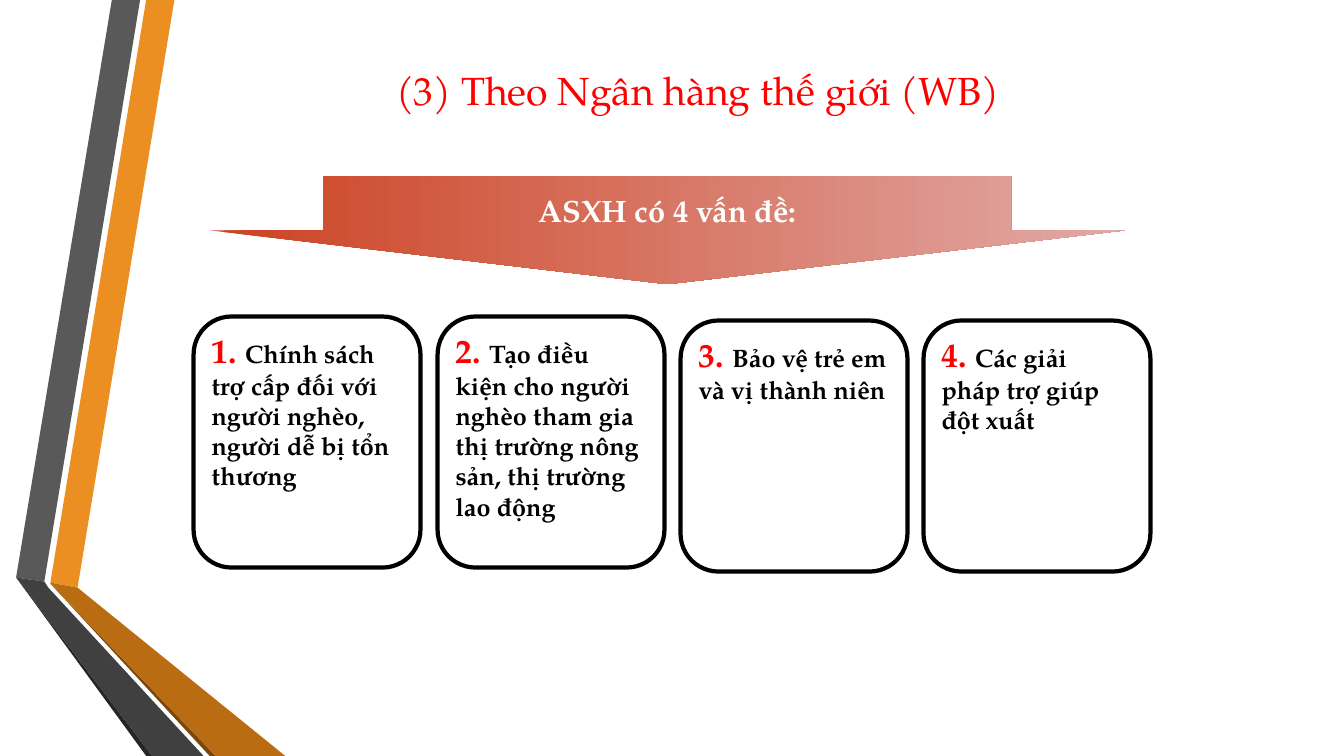
"""Build the slide on the four social security issues named by the World Bank."""
from pptx import Presentation
from pptx.dml.color import RGBColor
from pptx.enum.shapes import MSO_SHAPE
from pptx.enum.text import MSO_ANCHOR, MSO_AUTO_SIZE, PP_ALIGN
from pptx.util import Emu, Pt

FONT = "TeX Gyre Pagella"
PX = 9144


def px(*lengths):
    return [Emu(n * PX) for n in lengths]


def rgb(value):
    return RGBColor.from_string(value)


prs = Presentation()
prs.slide_width, prs.slide_height = px(1333, 750)
s = prs.slides.add_slide(prs.slide_layouts[6])

ribbons = [
    ("EB8F22", [(50, 578), (77, 583), (173, 0), (145, 0)]),
    ("595959", [(139, 0), (111, 0), (16, 573), (44, 577)]),
    ("262626", [(16, 573), (145, 750), (151, 750)]),
    ("7B480B", [(50, 579), (208, 750), (214, 750)]),
    ("B96C11", [(50, 578), (50, 579), (214, 750), (283, 750), (77, 583)]),
    ("404040", [(202, 750), (48, 583), (44, 577), (16, 573), (151, 750)]),
]
ribbon_group = s.shapes.add_group_shape()
for color, points in ribbons:
    builder = ribbon_group.shapes.build_freeform(*points[0], scale=PX)
    builder.add_line_segments(points[1:], close=True)
    sp = builder.convert_to_shape()
    sp.shadow.inherit = False
    sp.fill.solid()
    sp.fill.fore_color.rgb = rgb(color)
    sp.line.fill.background()

title = s.shapes.add_textbox(*px(217, 58, 950, 62))
arrow = s.shapes.add_shape(MSO_SHAPE.DOWN_ARROW, *px(208, 175, 908, 107))
arrow.adjustments[0] = 0.751
arrow.adjustments[1] = 0.5
arrow.shadow.inherit = False
arrow.line.fill.background()
arrow.fill.gradient()
arrow.fill.gradient_angle = 0
for stop, color in zip(arrow.fill.gradient_stops, ("CD4223", "E1AAA6")):
    stop.color.rgb = rgb(color)

headings = [
    (title, "(3) Theo Ngân hàng thế giới (WB)", 28, "FF0000", False, 0),
    (arrow, "ASXH có 4 vấn đề:", 22, "FFFFFF", True, 6),
]
for sp, text, size, color, bold, space in headings:
    tf = sp.text_frame
    tf.word_wrap = True
    tf.vertical_anchor = MSO_ANCHOR.MIDDLE
    p = tf.paragraphs[0]
    p.text = text
    p.alignment = PP_ALIGN.CENTER
    p.space_before = Pt(space)
    p.font.name, p.font.size, p.font.bold = FONT, Pt(size), bold
    p.font.color.rgb = rgb(color)

issues = [
    ("Chính sách trợ cấp đối với người nghèo, người dễ bị tổn thương", 314, 172),
    ("Tạo điều kiện cho người nghèo tham gia thị trường nông sản, "
     "thị trường lao động", 314, 232),
    ("Bảo vệ trẻ em và vị thành niên", 318, 81),
    ("Các giải pháp trợ giúp đột xuất", 318, 111),
]
for i, (issue, top, text_height) in enumerate(issues):
    left = 192 + round(i * 241.5)
    card = s.shapes.add_group_shape()
    sp = card.shapes.add_shape(
        MSO_SHAPE.ROUNDED_RECTANGLE, *px(left, top, 225, 249))
    sp.shadow.inherit = False
    sp.fill.background()
    sp.line.color.rgb = rgb("000000")
    sp.line.width = Pt(3)

    tf = card.shapes.add_textbox(
        *px(left + 8, top + 8, 208, text_height)).text_frame
    tf.word_wrap = True
    tf.auto_size = MSO_AUTO_SIZE.SHAPE_TO_FIT_TEXT
    p = tf.paragraphs[0]
    p.font.name, p.font.bold = FONT, True
    for text, size, color in ((f"{i + 1}. ", 24, "FF0000"), (issue, 18, "000000")):
        r = p.add_run()
        r.text = text
        r.font.size = Pt(size)
        r.font.color.rgb = rgb(color)

prs.save("out.pptx")
